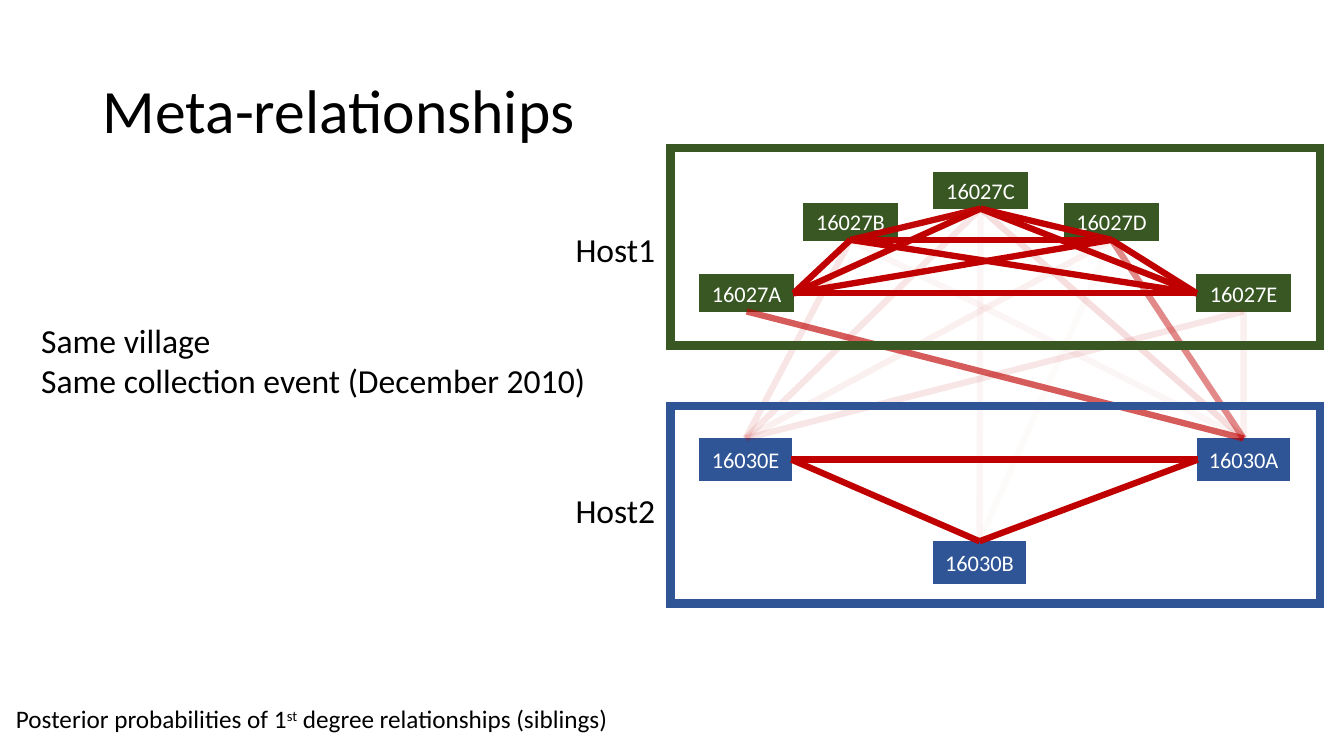
"""Builds the Meta-relationships slide with its two hosts and the links between samples."""
from itertools import combinations

from lxml import etree
from pptx import Presentation, util as u
from pptx.dml.color import RGBColor
from pptx.enum import shapes, text
from pptx.oxml.ns import qn

COLORS = {"host1": "385723", "host2": "2F5597", "link": "C00000",
          "ink": "000000", "paper": "FFFFFF"}


def put(obj, values):
    for name, value in values.items():
        setattr(obj, name, value)


class Deck:
    font = "Calibri"

    def __init__(self):
        self.prs = Presentation()
        put(self.prs, {"slide_width": u.Inches(13.33), "slide_height": u.Inches(7.5)})
        self.s = self.prs.slides.add_slide(self.prs.slide_layouts[6])

    def rgb(self, name):
        return RGBColor.from_string(COLORS[name])

    def run(self, p, words, size, color, raised=False):
        r = p.add_run()
        r.text = words
        put(r.font, {"name": self.font, "size": u.Pt(size)})
        r.font.color.rgb = self.rgb(color)
        if raised:
            r.font._element.set("baseline", "30000")

    def rect(self, at, color, width, filled):
        sp = self.s.shapes.add_shape(shapes.MSO_SHAPE.RECTANGLE, *map(u.Inches, at))
        sp.shadow.inherit = False
        if filled:
            sp.fill.solid()
            sp.fill.fore_color.rgb = self.rgb(color)
        else:
            sp.fill.background()
        sp.line.width = u.Pt(width)
        sp.line.color.rgb = self.rgb(color)
        etree.SubElement(sp._element.spPr.find(qn("a:ln")), qn("a:miter"), lim="800000")
        return sp

    def node(self, name, at, color):
        sp = self.rect(at, color, 1, True)
        tf = sp.text_frame
        put(tf, {"word_wrap": False, "vertical_anchor": text.MSO_ANCHOR.MIDDLE})
        p = tf.paragraphs[0]
        p.alignment = text.PP_ALIGN.CENTER
        self.run(p, name, 16, "paper")
        return sp

    def link(self, start, start_side, end, end_side, opacity=100):
        c = self.s.shapes.add_connector(shapes.MSO_CONNECTOR.STRAIGHT, 0, 0, 0, 0)
        c.begin_connect(start, start_side)
        c.end_connect(end, end_side)
        c.line.width = u.Pt(4.5)
        c.line.color.rgb = self.rgb("link")
        spPr = c._element.spPr
        if opacity < 100:
            clr = spPr.find(".//" + qn("a:srgbClr"))
            etree.SubElement(clr, qn("a:alpha"), val=str(opacity * 1000))
        etree.SubElement(spPr, qn("a:effectLst"))

    def label(self, at, paragraphs, size, **frame):
        tf = self.s.shapes.add_textbox(*map(u.Inches, at)).text_frame
        put(tf, {"word_wrap": False, "auto_size": text.MSO_AUTO_SIZE.SHAPE_TO_FIT_TEXT, **frame})
        for i, runs in enumerate(paragraphs):
            p = tf.paragraphs[0] if i == 0 else tf.add_paragraph()
            for words, raised in runs:
                self.run(p, words, size, "ink", raised)
        return tf


NODES = {
    "host1": ("16027", 0.93, 0.36, {"A": (6.94, 2.73), "B": (7.97, 2.02), "C": (9.26, 1.71),
                                    "D": (10.56, 2.02), "E": (11.87, 2.73)}),
    "host2": ("16030", 0.91, 0.42, {"E": (6.94, 4.35), "B": (9.26, 5.37), "A": (11.88, 4.35)}),
}
INNER_SIDES = {"host1": {"A": 3, "B": 2, "C": 2, "D": 2, "E": 1},
               "host2": {"E": 3, "B": 0, "A": 1}}
INNER_OPACITY = {("host1", "B", "C"): 97}
CROSS_OPACITY = {"AA": 64, "BA": 3, "BE": 9, "CA": 13, "CB": 3, "CE": 9,
                 "DA": 45, "DB": 2, "DE": 5, "EA": 5, "EE": 10}


def main():
    deck = Deck()
    deck.label((0.92, 0.4, 12.41, 1.45), [[("Meta-relationships", False)]], 44,
               word_wrap=True, auto_size=text.MSO_AUTO_SIZE.NONE,
               vertical_anchor=text.MSO_ANCHOR.MIDDLE).paragraphs[0].line_spacing = 0.9

    boxes = {}
    for host, (prefix, w, h, places) in NODES.items():
        boxes[host] = {k: deck.node(prefix + k, (x, y, w, h), host)
                       for k, (x, y) in places.items()}
    for (a, b), opacity in CROSS_OPACITY.items():
        deck.link(boxes["host1"][a], 2, boxes["host2"][b], 0, opacity)
    for host, sides in INNER_SIDES.items():
        for a, b in combinations(sides, 2):
            deck.link(boxes[host][a], sides[a], boxes[host][b], sides[b],
                      INNER_OPACITY.get((host, a, b), 100))

    deck.label((0.06, 6.93, 6.15, 0.4),
               [[("Posterior probabilities of 1", False), ("st", True),
                 (" degree relationships (siblings)", False)]], 18)
    for host, top, name_top in (("host1", 1.47, 2.22), ("host2", 4.03, 4.81)):
        deck.rect((6.65, top, 6.44, 1.96), host, 6, False)
        deck.label((5.61, name_top, 1, 0.5), [[(host.capitalize(), False)]], 24)
    deck.label((0.31, 3.12, 5.65, 0.91),
               [[("Same village", False)],
                [("Same collection event (December 2010)", False)]], 24)
    deck.prs.save("out.pptx")


if __name__ == "__main__":
    main()
